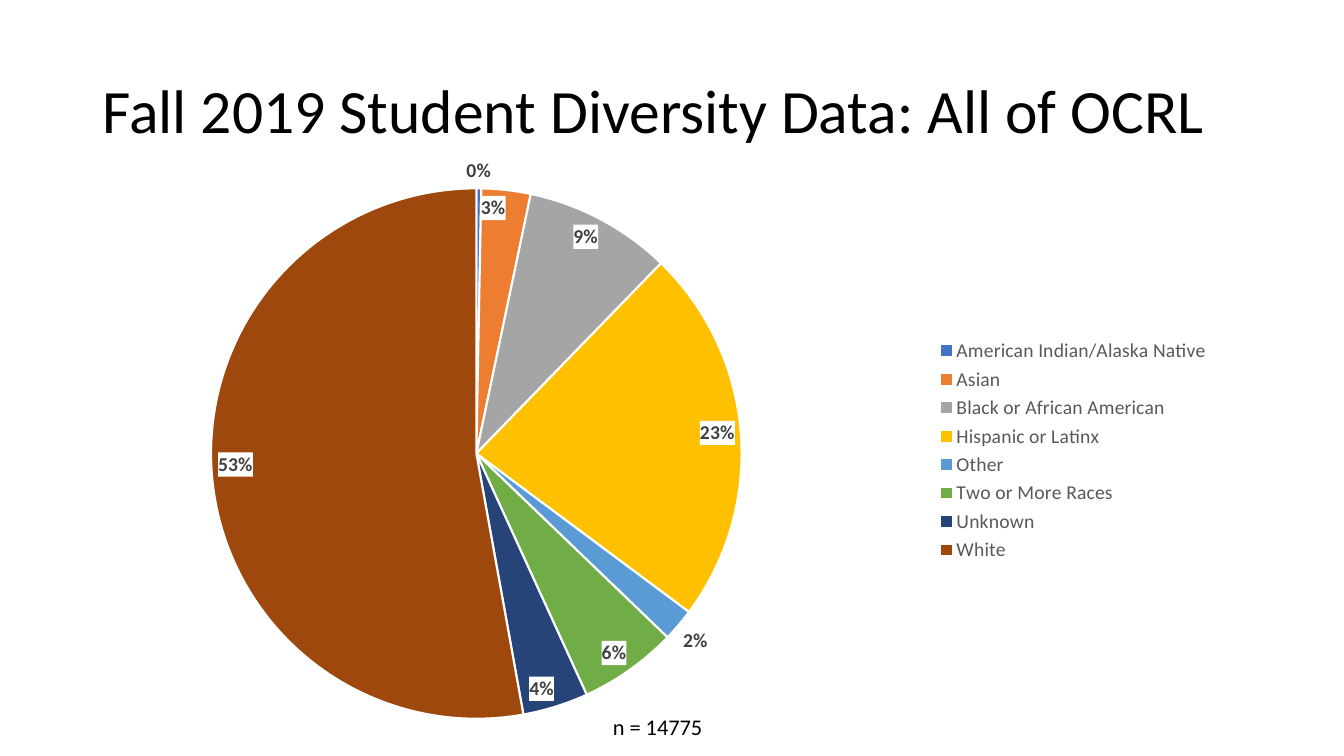
from pptx import Presentation
from pptx import util as u
from pptx.chart.data import CategoryChartData
from pptx.dml.color import RGBColor
from pptx.enum import chart as ch, text
from pptx.oxml import parse_xml
from pptx.oxml.ns import nsdecls, qn

FONT = "Calibri"
GROUPS = [
    ("American Indian/Alaska Native", 0.3, "4472C4"),
    ("Asian", 3, "ED7D31"),
    ("Black or African American", 9, "A5A5A5"),
    ("Hispanic or Latinx", 23, "FFC000"),
    ("Other", 2, "5B9BD5"),
    ("Two or More Races", 6, "70AD47"),
    ("Unknown", 4, "264478"),
    ("White", 53, "9E480E"),
]
OUTSIDE_GROUPS = ("American Indian/Alaska Native", "Other")


def color(hex_value):
    return RGBColor.from_string(hex_value)


def style_font(font, size, hex_value, bold=False):
    font.name = FONT
    font.size = u.Pt(size)
    font.bold = bold
    font.color.rgb = color(hex_value)


def add_words(slide, box, words, size, anchor, spacing=1.0):
    frame = slide.shapes.add_textbox(*map(u.Inches, box)).text_frame
    frame.word_wrap = True
    frame.vertical_anchor = anchor
    paragraph = frame.paragraphs[0]
    paragraph.text = words
    paragraph.line_spacing = spacing
    style_font(paragraph.font, size, "000000")


def set_layout(part, x, y, w, h, inner=False):
    for old in part.findall(qn("c:layout")):
        part.remove(old)
    target = '<c:layoutTarget val="inner"/>' if inner else ""
    layout = parse_xml(
        f'<c:layout {nsdecls("c")}><c:manualLayout>{target}'
        '<c:xMode val="edge"/><c:yMode val="edge"/>'
        f'<c:x val="{x}"/><c:y val="{y}"/><c:w val="{w}"/><c:h val="{h}"/>'
        "</c:manualLayout></c:layout>"
    )
    position = part.find(qn("c:legendPos"))
    if position is None:
        part.insert(0, layout)
    else:
        position.addnext(layout)


def label_shares(series):
    shares = series.data_labels
    shares.show_percentage = True
    shares.show_value = False
    shares.number_format = "0%"
    shares.number_format_is_linked = False
    shares.position = ch.XL_LABEL_POSITION.INSIDE_END
    style_font(shares.font, 14, "404040", True)
    white_box = parse_xml(
        f'<c:spPr {nsdecls("c", "a")}><a:solidFill>'
        '<a:srgbClr val="FFFFFF"/></a:solidFill></c:spPr>'
    )
    labels = series._element.find(qn("c:dLbls"))
    labels.find(qn("c:txPr")).addprevious(white_box)


def label_outside(series, index):
    share = series.points[index].data_label
    style_font(share.font, 14, "404040", True)
    share.position = ch.XL_LABEL_POSITION.OUTSIDE_END
    label = series._element.find(qn("c:dLbls")).findall(qn("c:dLbl"))[-1]
    label.find(qn("c:showVal")).set("val", "0")
    label.find(qn("c:showPercent")).set("val", "1")


def add_diversity_pie(slide, box):
    data = CategoryChartData()
    data.categories = [name for name, _, _ in GROUPS]
    data.add_series("Series 1", [share for _, share, _ in GROUPS])
    pie = slide.shapes.add_chart(
        ch.XL_CHART_TYPE.PIE, *map(u.Inches, box), data
    ).chart
    pie.has_title = False
    style_font(pie.font, 10, "000000")
    pie.has_legend = True
    pie.legend.position = ch.XL_LEGEND_POSITION.RIGHT
    pie.legend.include_in_layout = False
    style_font(pie.legend.font, 14, "595959")

    plot = pie.plots[0]
    plot.vary_by_categories = True
    series = plot.series[0]
    label_shares(series)
    for index, (name, _, fill) in enumerate(GROUPS):
        group_format = series.points[index].format
        group_format.fill.solid()
        group_format.fill.fore_color.rgb = color(fill)
        group_format.line.color.rgb = color("FFFFFF")
        group_format.line.width = u.Pt(1.5)
        if name in OUTSIDE_GROUPS:
            label_outside(series, index)

    set_layout(pie._chartSpace.chart.plotArea, 0.16, 0.07, 0.44, 0.87, inner=True)
    set_layout(pie.legend._element, 0.76, 0.31, 0.23, 0.38)


def build_diversity_slide(deck):
    slide = deck.slides.add_slide(deck.slide_layouts[6])
    add_words(slide, (0.92, 0.4, 11.5, 1.45),
              "Fall 2019 Student Diversity Data: All of OCRL",
              44, text.MSO_ANCHOR.MIDDLE, 0.9)
    add_diversity_pie(slide, (0.18, 1.44, 11.96, 6.06))
    add_words(slide, (5.98, 7.03, 1.23, 0.37), "n = 14775",
              16, text.MSO_ANCHOR.TOP)


def main():
    deck = Presentation()
    deck.slide_width = u.Inches(13.33)
    deck.slide_height = u.Inches(7.5)
    build_diversity_slide(deck)
    deck.save("out.pptx")


if __name__ == "__main__":
    main()
